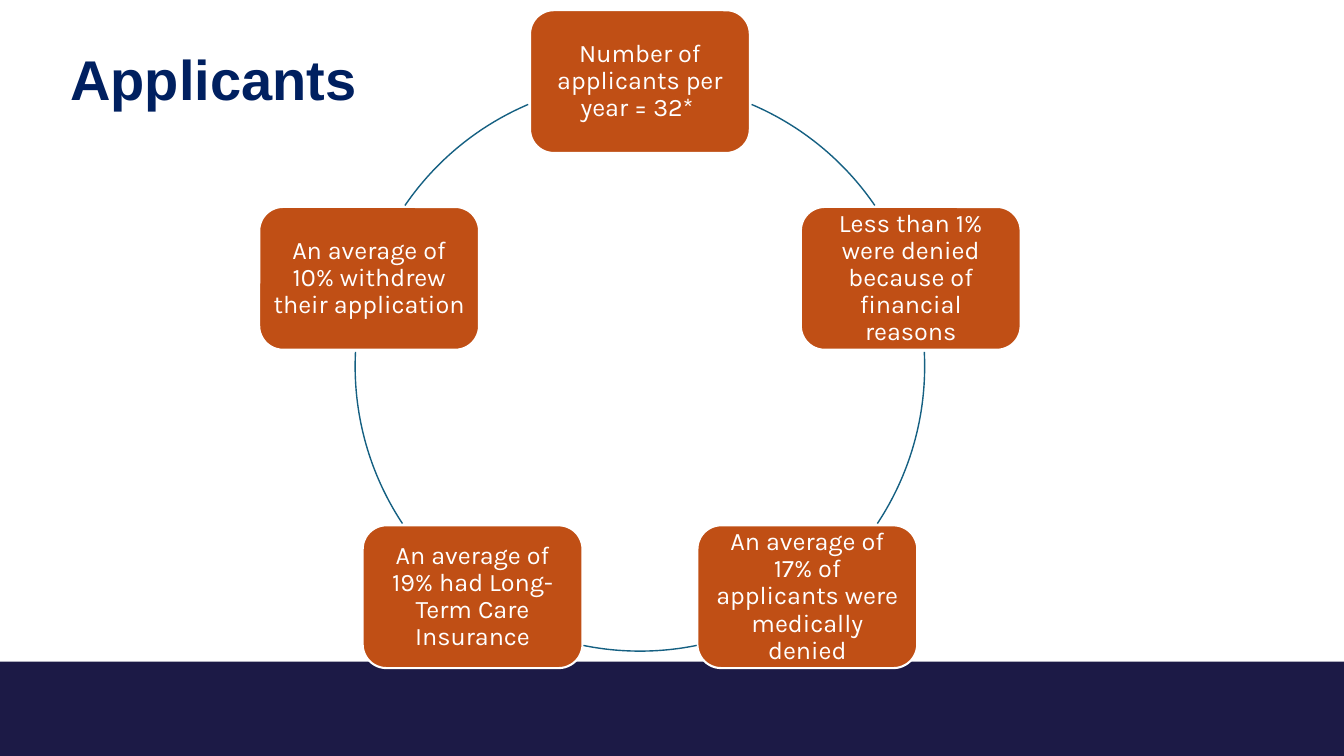
from math import cos, radians, sin

from pptx import Presentation
from pptx.dml.color import RGBColor
from pptx.enum.shapes import MSO_SHAPE
from pptx.enum.text import MSO_ANCHOR, PP_ALIGN
from pptx.util import Pt

WIDE, HIGH = 960, 540
FACTS = [
    "Number of applicants per year = 32* ",
    "Less than 1% were denied because of financial reasons",
    "An average of 17% of applicants were medically denied",
    "An average of 19% had Long-Term Care Insurance",
    "An average of 10% withdrew their application",
]
ARCS = [(293.1, 325.6), (357.1, 33.5), (78.5, 101.5), (146.5, 182.9), (214.4, 246.9)]


def color(code):
    return RGBColor.from_string(code)


def place(slide, kind, box, fill=None, line=None, weight=1):
    shape = slide.shapes.add_shape(kind, *map(Pt, box))
    shape.shadow.inherit = False
    if fill:
        shape.fill.solid()
        shape.fill.fore_color.rgb = color(fill)
    else:
        shape.fill.background()
    if line:
        shape.line.color.rgb = color(line)
        shape.line.width = Pt(weight)
    else:
        shape.line.fill.background()
    return shape


def write(shape, text, face, size, tint, bold=False, align=PP_ALIGN.LEFT):
    frame = shape.text_frame
    frame.word_wrap = True
    frame.vertical_anchor = MSO_ANCHOR.MIDDLE
    para = frame.paragraphs[0]
    para.text = text
    para.alignment = align
    para.line_spacing = 0.9
    font = para.font
    font.name, font.size, font.bold = face, Pt(size), bold
    font.color.rgb = color(tint)
    return frame


def footer(slide, box):
    place(slide, MSO_SHAPE.RECTANGLE, box, "1C1A46")


def title(slide, box):
    label = slide.shapes.add_textbox(*map(Pt, box))
    write(label, "Applicants", "Arial", 40, "002060", True)


def card(slide, box, text):
    shape = place(slide, MSO_SHAPE.ROUNDED_RECTANGLE, box, "C04F15", "FFFFFF", 1.5)
    frame = write(shape, text, "Karla", 18, "FFFFFF", align=PP_ALIGN.CENTER)
    frame.margin_left = frame.margin_right = Pt(5)
    frame.margin_top = frame.margin_bottom = Pt(5)


def cycle(slide, box, wide=157, high=102):
    left, top, size, _ = box
    radius = size / 2
    for index, (text, (start, end)) in enumerate(zip(FACTS, ARCS)):
        angle = radians(index * 360 / len(FACTS) - 90)
        x = left + radius + radius * cos(angle)
        y = top + radius + radius * sin(angle)
        card(slide, (x - wide / 2, y - high / 2, wide, high), text)
        arc = place(slide, MSO_SHAPE.ARC, box, line="156082")
        arc.adjustments[0] = start * 0.6
        arc.adjustments[1] = end * 0.6


def main():
    deck = Presentation()
    deck.slide_width, deck.slide_height = Pt(WIDE), Pt(HIGH)
    slide = deck.slides.add_slide(deck.slide_layouts[6])
    footer(slide, (0, 472.5, WIDE, HIGH - 472.5))
    cycle(slide, (253.7, 58.3, 406.8, 406.8))
    title(slide, (43.2, 6.5, 828, 104.4))
    deck.save("out.pptx")


if __name__ == "__main__":
    main()
